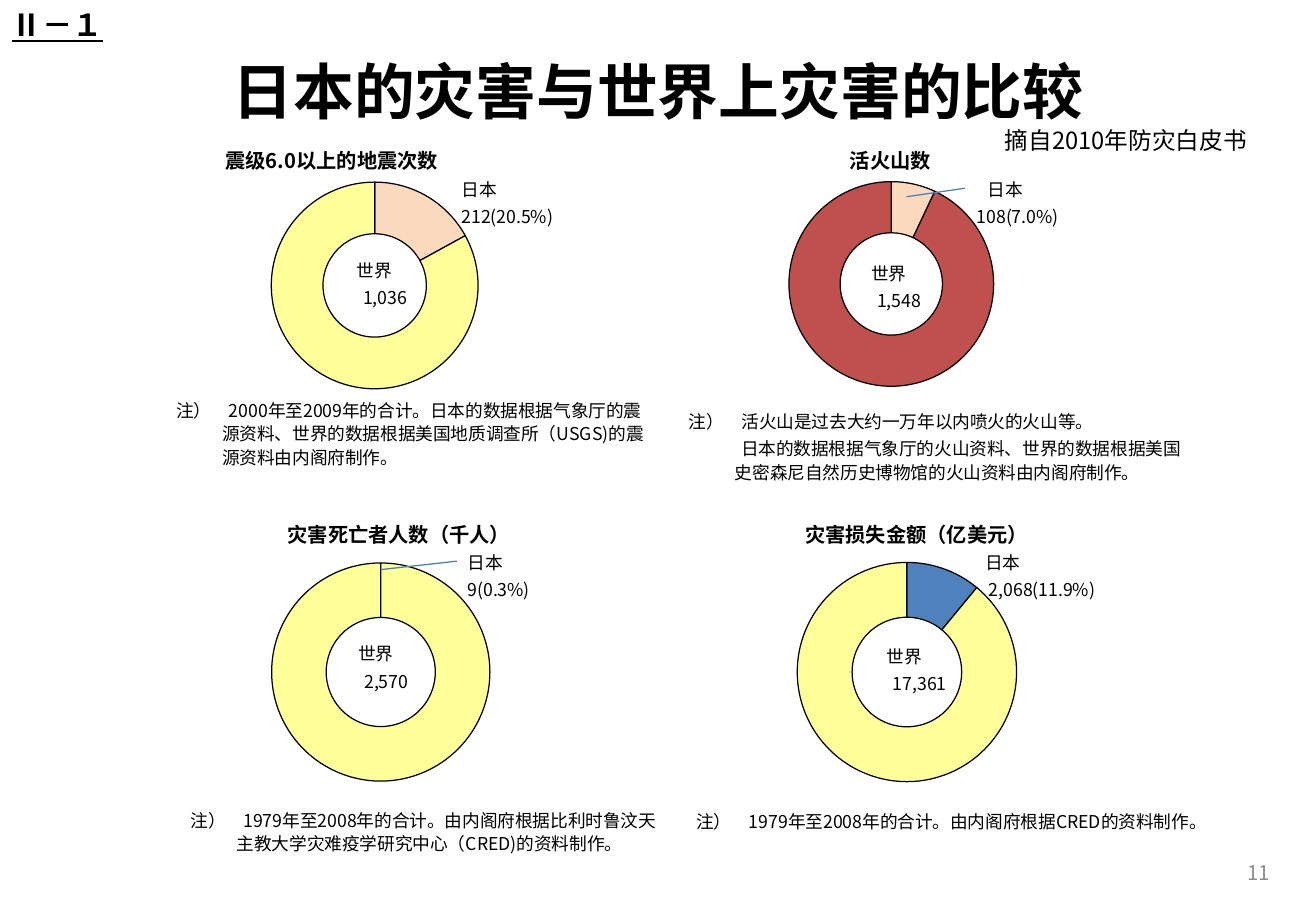
import pptx
import pptx.chart.data
import pptx.dml.color
import pptx.enum.chart
import pptx.enum.shapes
import pptx.enum.text
import pptx.oxml
import pptx.oxml.ns
import pptx.util

PX = 9144  # 100 px to the inch
FACE = "Noto Sans CJK SC"
RGB = pptx.dml.color.RGBColor
BLACK = RGB(0, 0, 0)
GREY = RGB(0x8C, 0x8C, 0x8C)
PEACH = RGB(0xFB, 0xD9, 0xBD)
YELLOW = RGB(0xFF, 0xFF, 0x99)
RED = RGB(0xC0, 0x50, 0x4D)
BLUE = RGB(0x4F, 0x81, 0xBD)
LEAD = RGB(0x4B, 0x7E, 0xBC)
ALIGN = pptx.enum.text.PP_ALIGN
ANCHOR = pptx.enum.text.MSO_ANCHOR
HANG = (38, -38)
FIRST = (38, 5)
SERIES = "Series 1"
qn = pptx.oxml.ns.qn

# box, title, series, title spot, plot area, shares of Japan and world, colours
RINGS = [
    ((116, 99, 370, 252), "震级6.0以上的地震次数", SERIES, (0.18, 0.06),
     (0.29, 0.2, 0.46, 0.68), (17, 83), (PEACH, YELLOW)),
    ((565, 99, 337, 252), "活火山数", "活火山数", (0.39, 0.06),
     (0.25, 0.2, 0.5, 0.67), (7, 93), (PEACH, RED)),
    ((132, 406, 339, 268), "灾害死亡者人数（千人）", SERIES, (0.3, 0.06),
     (0.27, 0.21, 0.53, 0.68), (0, 100), (PEACH, YELLOW)),
    ((557, 406, 354, 268), "灾害损失金额（亿美元）", SERIES, (0.29, 0.06),
     (0.28, 0.21, 0.51, 0.68), (11, 89), (BLUE, YELLOW)),
]

# left, top, indents of the two lines, lines
LABELS = [
    (361, 123, (9, 9), ("日本", "212(20.5%)")),
    (794, 123, (9, 0), ("日本", "108(7.0%)")),
    (368, 430, (7, 7), ("日本", "9(0.3%)")),
    (801, 430, (0, 3), ("日本", "2,068(11.9%)")),
    (271, 189, (13, 18), ("世界", "1,036")),
    (695, 192, (12, 17), ("世界", "1,548")),
    (273, 505, (12, 17), ("世界", "2,570")),
    (708, 507, (12, 17), ("世界", "17,361")),
]

NOTES = [
    ((135, 309, 409, 94),
     ["注）　2000年至2009年的合计。日本的数据根据气象厅的震源资料、"
      "世界的数据根据美国地质调查所（USGS)的震源资料由内阁府制作。"]),
    ((557, 320, 433, 94),
     ["注）　活火山是过去大约一万年以内喷火的火山等。",
      "日本的数据根据气象厅的火山资料、世界的数据根据美国"
      "史密森尼自然历史博物馆的火山资料由内阁府制作。"]),
    ((147, 637, 409, 94),
     ["注）　1979年至2008年的合计。由内阁府根据比利时鲁汶"
      "天主教大学灾难疫学研究中心（CRED)的资料制作。"]),
    ((563, 628, 433, 94),
     ["注）　1979年至2008年的合计。由内阁府根据CRED的资料制作。"]),
]


def scale(box):
    return [n * PX for n in box]


def add_run(para, text, size, color=BLACK, bold=False, under=False):
    run = para.add_run()
    run.text = text
    font = run.font
    font.name, font.size = FACE, pptx.util.Pt(size)
    font.bold, font.underline = bold, under
    font.color.rgb = color
    east = pptx.oxml.parse_xml(
        f'<a:ea {pptx.oxml.ns.nsdecls("a")} typeface="{FACE}"/>')
    run.font._element.find(qn("a:latin")).addnext(east)


def add_box(slide, box, anchor=ANCHOR.TOP):
    frame = slide.shapes.add_textbox(*scale(box)).text_frame
    frame.word_wrap = True
    frame.vertical_anchor = anchor
    return frame


def add_line(slide, box, text, size, align=ALIGN.LEFT, anchor=ANCHOR.TOP,
             **look):
    para = add_box(slide, box, anchor).paragraphs[0]
    para.alignment = align
    add_run(para, text, size, **look)


def add_lines(slide, box, lines, indents):
    """Small text; each paragraph has its own (left, first line) indent."""
    frame = add_box(slide, box, ANCHOR.MIDDLE)
    for i, (text, (left, first)) in enumerate(zip(lines, indents)):
        para = frame.add_paragraph() if i else frame.paragraphs[0]
        para.line_spacing = pptx.util.Pt(14)
        if i:
            para.space_before = pptx.util.Pt(2)
        props = para._p.get_or_add_pPr()
        props.set("marL", str(left * PX))
        props.set("indent", str(first * PX))
        add_run(para, text, 10.5)


def make_spot(values, inner=False):
    """Manual chart layout from x, y and, if given, width and height."""
    parts = '<c:layoutTarget val="inner"/>' if inner else ""
    parts += "".join(f'<c:{k}Mode val="edge"/>' for k in "xy")
    parts += "".join(f'<c:{k} val="{v}"/>' for k, v in zip("xywh", values))
    return pptx.oxml.parse_xml(
        f'<c:layout {pptx.oxml.ns.nsdecls("c")}>'
        f"<c:manualLayout>{parts}</c:manualLayout></c:layout>")


def drop_spot(parent):
    for old in parent.findall(qn("c:layout")):
        parent.remove(old)


def add_ring(slide, box, title, series, spot, area, shares, colors):
    data = pptx.chart.data.CategoryChartData()
    data.categories = ["1", "2"]
    data.add_series(series, shares)
    chart = slide.shapes.add_chart(
        pptx.enum.chart.XL_CHART_TYPE.DOUGHNUT, *scale(box), data).chart
    chart.has_legend = False
    chart.font.name, chart.font.size = "Calibri", pptx.util.Pt(18)
    chart.font.color.rgb = BLACK
    chart.has_title = True
    head = chart.chart_title
    add_run(head.text_frame.paragraphs[0], title, 12, bold=True)
    drop_spot(head._element)
    head._element.find(qn("c:tx")).addnext(make_spot(spot))
    body = chart._chartSpace.chart
    drop_spot(body.plotArea)
    body.plotArea.insert(0, make_spot(area, inner=True))
    body.addnext(pptx.oxml.parse_xml(
        f'<c:spPr {pptx.oxml.ns.nsdecls("c", "a")}><a:noFill/>'
        "<a:ln><a:noFill/></a:ln></c:spPr>"))
    plot = chart.plots[0]
    plot.vary_by_categories = True
    plot.has_data_labels = False
    for i, color in enumerate(colors):
        form = plot.series[0].points[i].format
        form.fill.solid()
        form.fill.fore_color.rgb = color
        form.line.color.rgb = BLACK
        form.line.width = pptx.util.Pt(0.75)


def add_lead(slide, ends):
    line = slide.shapes.add_connector(
        pptx.enum.shapes.MSO_CONNECTOR.STRAIGHT, *scale(ends))
    line.line.color.rgb = LEAD
    line.line.width = pptx.util.Pt(0.75)
    line._element.spPr.append(pptx.oxml.parse_xml(
        f'<a:effectLst {pptx.oxml.ns.nsdecls("a")}/>'))


def set_title(slide, box, text):
    title = slide.shapes.title
    title.left, title.top, title.width, title.height = scale(box)
    title.text_frame.vertical_anchor = ANCHOR.MIDDLE
    para = title.text_frame.paragraphs[0]
    para.alignment = ALIGN.CENTER
    add_run(para, text, 36, bold=True)


def main():
    deck = pptx.Presentation()
    deck.slide_width, deck.slide_height = scale((1083, 750))
    slide = deck.slides.add_slide(deck.slide_layouts[5])
    set_title(slide, (0, 31, 1083, 86), "日本的灾害与世界上灾害的比较")
    for ring in RINGS:
        add_ring(slide, *ring)
    add_line(slide, (794, 99, 242, 34), "摘自2010年防灾白皮书", 14,
             ALIGN.RIGHT)
    add_line(slide, (802, 698, 253, 40), "11", 12, ALIGN.RIGHT,
             ANCHOR.MIDDLE, color=GREY)
    add_line(slide, (0, 0, 359, 52), "Ⅱ－１", 18, bold=True, under=True)
    for box, lines in NOTES:
        add_lines(slide, box, lines, (HANG, FIRST))
    for left, top, shifts, lines in LABELS:
        add_lines(slide, (left, top, 197, 87), lines,
                  [(n, 0) for n in shifts])
    for ends in ((746, 162, 794, 155), (313, 469, 376, 462)):
        add_lead(slide, ends)
    deck.save("out.pptx")


if __name__ == "__main__":
    main()
